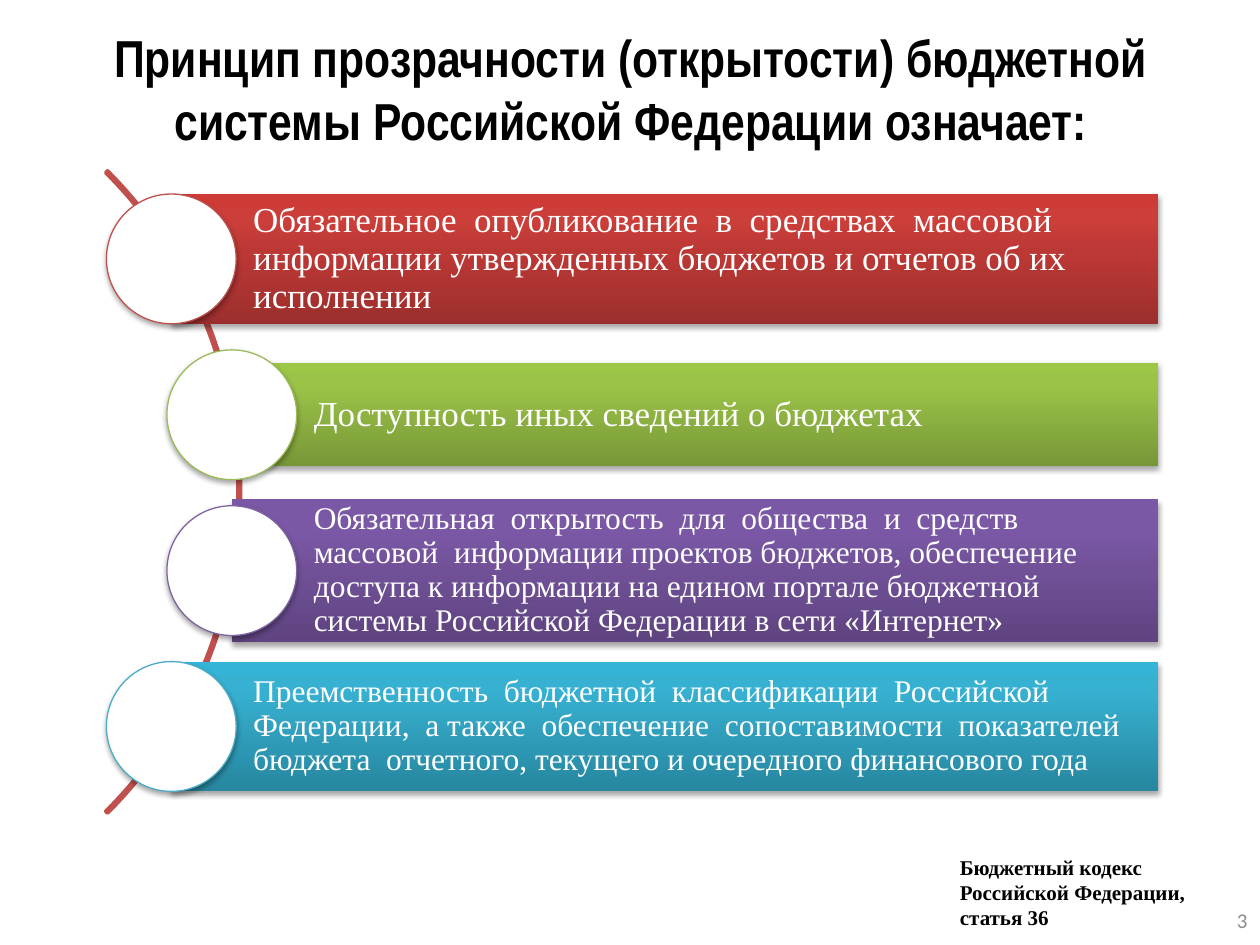
from dataclasses import dataclass

from lxml.etree import SubElement
from pptx import Presentation
from pptx.dml.color import RGBColor
from pptx.enum.shapes import MSO_SHAPE as Shape
from pptx.enum.text import MSO_ANCHOR as Anchor, PP_ALIGN as Align
from pptx.oxml.ns import qn
from pptx.util import Inches, Pt


@dataclass(frozen=True)
class Theme:
    title_font: str = "Arial Narrow"
    body_font: str = "Times New Roman"
    number_font: str = "Calibri"
    title_size: float = 29.7
    large_size: float = 20
    medium_size: float = 18
    small_size: float = 12
    black: str = "000000"
    white: str = "FFFFFF"
    gray: str = "8C8C8C"
    arc: str = "C0504D"


@dataclass(frozen=True)
class Principle:
    text: str
    left: float
    height: float
    size: float
    inset: float
    outline: str
    stops: tuple[tuple[int, str], ...]


THEME = Theme()
OUTER, INNER = 1.36, 1.84  # bar left edges, which are also circle centres
BAR_RIGHT = 9.19
CIRCLE = 1.03
FIRST_CENTER, PITCH = 2.055, 1.237
ARC_SIZE = 7.21

PRINCIPLES = (
    Principle(
        "Обязательное  опубликование  в  средствах  массовой  информации "
        "утвержденных бюджетов и отчетов об их исполнении",
        OUTER, 1.03, THEME.large_size, 0.06, "C0504D",
        ((0, "9C2F2D"), (55, "BC3835"), (80, "CB3E3A"), (100, "CE3B37"))),
    Principle(
        "Доступность иных сведений о бюджетах",
        INNER, 0.82, THEME.large_size, 0.06, "9BBB59",
        ((0, "779737"), (80, "9BC348"), (100, "9DC746"))),
    Principle(
        "Обязательная  открытость  для  общества  и  средств  массовой  "
        "информации проектов бюджетов, обеспечение доступа к информации на едином "
        "портале бюджетной системы Российской Федерации в сети «Интернет»",
        INNER, 1.13, THEME.medium_size, 0.05, "8064A2",
        ((0, "5F4480"), (80, "7B58A6"), (100, "7C57A8"))),
    Principle(
        "Преемственность  бюджетной  классификации  Российской  Федерации,  "
        "а также  обеспечение  сопоставимости  показателей  бюджета  отчетного, "
        "текущего и очередного финансового года",
        OUTER, 1.02, THEME.medium_size, 0.05, "4BACC6",
        ((0, "2787A0"), (80, "37B1D2"), (100, "34B4D6"))),
)


def rgb(color: str) -> RGBColor:
    return RGBColor.from_string(color)


def write(tf, *lines: str, size: float, font: str = THEME.body_font,
          color: str = THEME.black, bold: bool = False, align=Align.LEFT,
          anchor=Anchor.TOP, spacing: float | None = None) -> None:
    """Put each line in its own paragraph, all in one format."""
    tf.word_wrap = True
    tf.vertical_anchor = anchor
    for i, line in enumerate(lines):
        p = tf.paragraphs[0] if i == 0 else tf.add_paragraph()
        p.alignment = align
        p.line_spacing = spacing
        r = p.add_run()
        r.text = line
        r.font.name, r.font.size, r.font.bold = font, Pt(size), bold
        r.font.color.rgb = rgb(color)


def add_text(s, left: float, top: float, width: float, height: float,
             *lines: str, **style) -> None:
    box = s.shapes.add_textbox(*map(Inches, (left, top, width, height)))
    write(box.text_frame, *lines, **style)


def add_shadow(sp) -> None:
    effects = SubElement(sp._element.spPr, qn("a:effectLst"))
    shadow = SubElement(effects, qn("a:outerShdw"), blurRad=str(Pt(3.1)),
                        dist=str(Pt(1.8)), dir="5400000", rotWithShape="0")
    color = SubElement(shadow, qn("a:srgbClr"), val=THEME.black)
    SubElement(color, qn("a:alpha"), val="35000")


def set_gradient(sp, stops: tuple[tuple[int, str], ...]) -> None:
    """Fill from bottom to top with any number of stops."""
    sp.fill.gradient()
    sp.fill.gradient_angle = 90
    stop_list = sp._element.spPr.find(qn("a:gradFill")).find(qn("a:gsLst"))
    for old in list(stop_list):
        stop_list.remove(old)
    for position, color in stops:
        stop = SubElement(stop_list, qn("a:gs"), pos=str(position * 1000))
        SubElement(stop, qn("a:srgbClr"), val=color)


def add_arc(s) -> None:
    sp = s.shapes.add_shape(Shape.BLOCK_ARC, Inches(-5.3), Inches(0.3),
                            Inches(ARC_SIZE), Inches(ARC_SIZE))
    for i, value in enumerate((189, 27, 0.003)):
        sp.adjustments[i] = value
    sp.shadow.inherit = False
    sp.fill.background()
    sp.line.color.rgb = rgb(THEME.arc)
    sp.line.width = Pt(2)


def add_bar(s, item: Principle, center: float) -> None:
    sp = s.shapes.add_shape(Shape.RECTANGLE, Inches(item.left),
                            Inches(center - item.height / 2),
                            Inches(BAR_RIGHT - item.left), Inches(item.height))
    set_gradient(sp, item.stops)
    sp.line.fill.background()
    add_shadow(sp)
    tf = sp.text_frame
    tf.margin_left = Inches(0.65)
    tf.margin_right = tf.margin_top = tf.margin_bottom = Inches(item.inset)
    write(tf, item.text, size=item.size, color=THEME.white,
          anchor=Anchor.MIDDLE, spacing=0.9)


def add_circle(s, item: Principle, center: float) -> None:
    sp = s.shapes.add_shape(Shape.OVAL, Inches(item.left - CIRCLE / 2),
                            Inches(center - CIRCLE / 2),
                            Inches(CIRCLE), Inches(CIRCLE))
    sp.fill.solid()
    sp.fill.fore_color.rgb = rgb(THEME.white)
    sp.line.color.rgb = rgb(item.outline)
    sp.line.width = Pt(0.75)
    add_shadow(sp)


def main() -> None:
    prs = Presentation()
    prs.slide_width, prs.slide_height = Inches(10), Inches(7.5)
    s = prs.slides.add_slide(prs.slide_layouts[6])

    add_text(s, 0.51, 0.17, 9, 1.06,
             "Принцип прозрачности (открытости) бюджетной системы "
             "Российской Федерации означает:",
             size=THEME.title_size, font=THEME.title_font, bold=True,
             align=Align.CENTER, anchor=Anchor.MIDDLE)
    add_arc(s)
    for i, item in enumerate(PRINCIPLES):
        center = FIRST_CENTER + i * PITCH
        add_bar(s, item, center)
        add_circle(s, item, center)
    add_text(s, 7.52, 6.73, 2.17, 0.71, "Бюджетный кодекс",
             "Российской Федерации,", "статья 36",
             size=THEME.small_size, bold=True)
    add_text(s, 7.67, 7.1, 2.33, 0.4, "3", size=THEME.small_size,
             font=THEME.number_font, color=THEME.gray,
             align=Align.RIGHT, anchor=Anchor.MIDDLE)
    prs.save("out.pptx")


if __name__ == "__main__":
    main()
